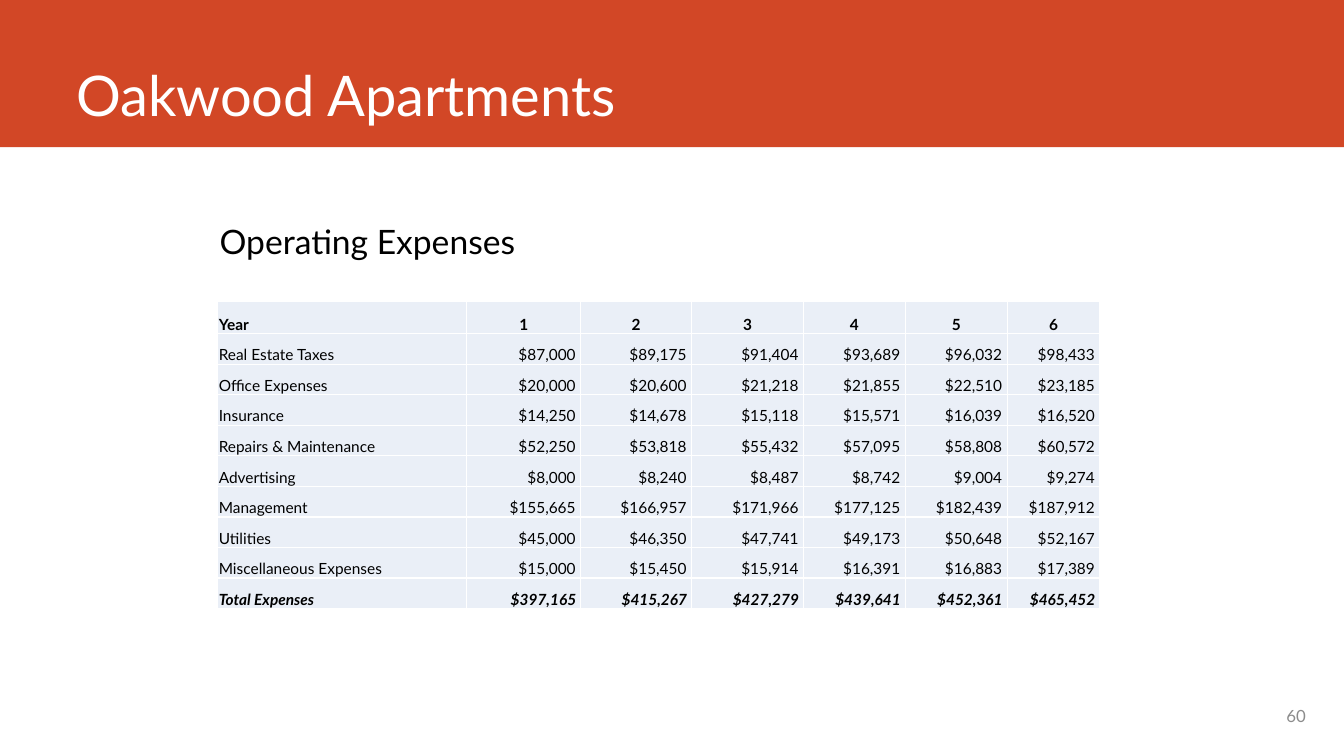
import pptx
import pptx.util
import pptx.dml.color
import pptx.enum.shapes
import pptx.enum.text
import pptx.oxml
import pptx.oxml.ns

EMU_PER_PX = 9144  # 100 px to the inch
COLORS = {"band": "D24726", "white": "FFFFFF", "black": "000000",
          "cell": "EAEFF7", "number": "8C8C8C"}
ALIGN = pptx.enum.text.PP_ALIGN
ANCHOR = pptx.enum.text.MSO_ANCHOR


def px(length):
    return pptx.util.Emu(length * EMU_PER_PX)


def rgb(name):
    return pptx.dml.color.RGBColor.from_string(COLORS[name])


class SlideBuilder:
    font = "Lato"

    def __init__(self, slide):
        self.slide = slide

    def style(self, text_frame, size, color, align, bold=False, italic=False):
        for paragraph in text_frame.paragraphs:
            paragraph.alignment = align
            for run in paragraph.runs:
                run.font.name = self.font
                run.font.size = pptx.util.Pt(size)
                run.font.color.rgb = rgb(color)
                run.font.bold = bold
                run.font.italic = italic

    def band(self, left, top, width, height, color):
        shape = self.slide.shapes.add_shape(
            pptx.enum.shapes.MSO_SHAPE.RECTANGLE,
            px(left), px(top), px(width), px(height))
        shape.shadow.inherit = False
        shape.fill.solid()
        shape.fill.fore_color.rgb = rgb(color)
        shape.line.fill.background()

    def text(self, box, wording, size, color, align=ALIGN.LEFT,
             anchor=ANCHOR.TOP, wrap=True):
        shape = self.slide.shapes.add_textbox(*map(px, box))
        text_frame = shape.text_frame
        text_frame.word_wrap = wrap
        text_frame.vertical_anchor = anchor
        text_frame.text = wording
        self.style(text_frame, size, color, align)

    def cell_borders(self, cell, color):
        properties = cell._tc.get_or_add_tcPr()
        for index, side in enumerate(("lnL", "lnR", "lnT", "lnB")):
            properties.insert(index, pptx.oxml.parse_xml(
                f'<a:{side} {pptx.oxml.ns.nsdecls("a")} w="12700"><a:solidFill>'
                f'<a:srgbClr val="{COLORS[color]}"/></a:solidFill></a:{side}>'))

    def table(self, left, top, widths, header_height, height, rows):
        frame = self.slide.shapes.add_table(
            len(rows), len(widths), px(left), px(top), px(sum(widths)), px(height))
        table = frame.table
        table.first_row = table.horz_banding = False
        for column, width in zip(table.columns, widths):
            column.width = px(width)
        body_height = px(height - header_height) // (len(rows) - 1)
        last = len(rows) - 1
        for row_index, values in enumerate(rows):
            table.rows[row_index].height = (
                body_height if row_index else px(header_height))
            for column_index, value in enumerate(values):
                cell = table.cell(row_index, column_index)
                cell.margin_left = cell.margin_right = cell.margin_top = px(1)
                cell.margin_bottom = 0
                cell.vertical_anchor = ANCHOR.BOTTOM
                cell.fill.solid()
                cell.fill.fore_color.rgb = rgb("cell")
                self.cell_borders(cell, "white")
                if column_index == 0:
                    align = ALIGN.LEFT
                else:
                    align = ALIGN.RIGHT if row_index else ALIGN.CENTER
                cell.text_frame.text = value
                self.style(cell.text_frame, 11, "black", align,
                           bold=row_index in (0, last), italic=row_index == last)


EXPENSES = [
    ("Real Estate Taxes", 87000, 89175, 91404, 93689, 96032, 98433),
    ("Office Expenses", 20000, 20600, 21218, 21855, 22510, 23185),
    ("Insurance", 14250, 14678, 15118, 15571, 16039, 16520),
    ("Repairs & Maintenance", 52250, 53818, 55432, 57095, 58808, 60572),
    ("Advertising", 8000, 8240, 8487, 8742, 9004, 9274),
    ("Management", 155665, 166957, 171966, 177125, 182439, 187912),
    ("Utilities", 45000, 46350, 47741, 49173, 50648, 52167),
    ("Miscellaneous Expenses", 15000, 15450, 15914, 16391, 16883, 17389),
    ("Total Expenses", 397165, 415267, 427279, 439641, 452361, 465452),
]


def main():
    presentation = pptx.Presentation()
    presentation.slide_width = px(1333)
    presentation.slide_height = px(750)
    builder = SlideBuilder(
        presentation.slides.add_slide(presentation.slide_layouts[6]))

    # Title band
    builder.band(0, 0, 1333, 146, "band")
    builder.text((66, 0, 1176, 132), "Oakwood Apartments", 40, "white",
                 anchor=ANCHOR.BOTTOM)

    # Expense table
    rows = [["Year"] + [str(year) for year in range(1, 7)]]
    rows += [[label] + [f"${amount:,} " for amount in amounts]
             for label, *amounts in EXPENSES]
    builder.table(216, 299, (247, 113, 110, 111, 101, 101, 92), 32, 305, rows)

    # Slide number and table heading
    builder.text((947, 690, 358, 40), "60", 12, "number", ALIGN.RIGHT,
                 ANCHOR.MIDDLE)
    builder.text((208, 214, 315, 50), "Operating Expenses", 24, "black",
                 wrap=False)

    presentation.save("out.pptx")


if __name__ == "__main__":
    main()
